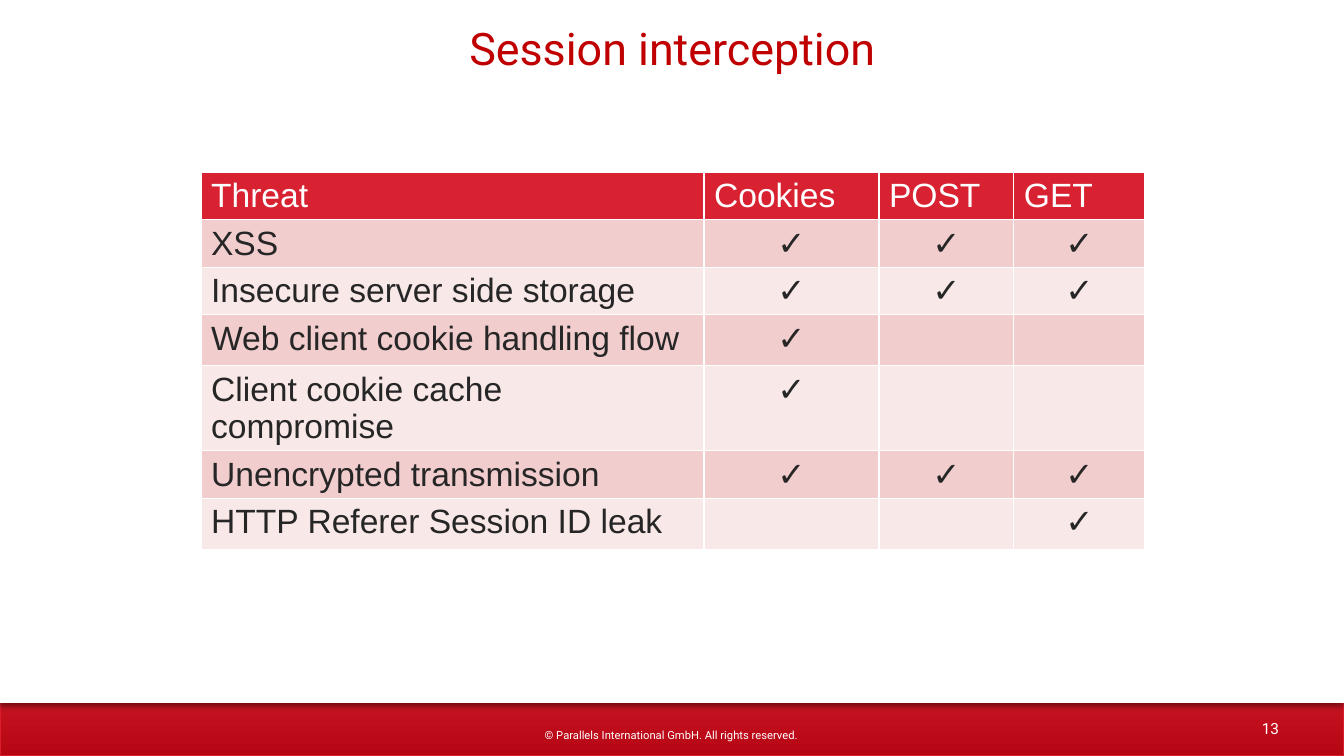
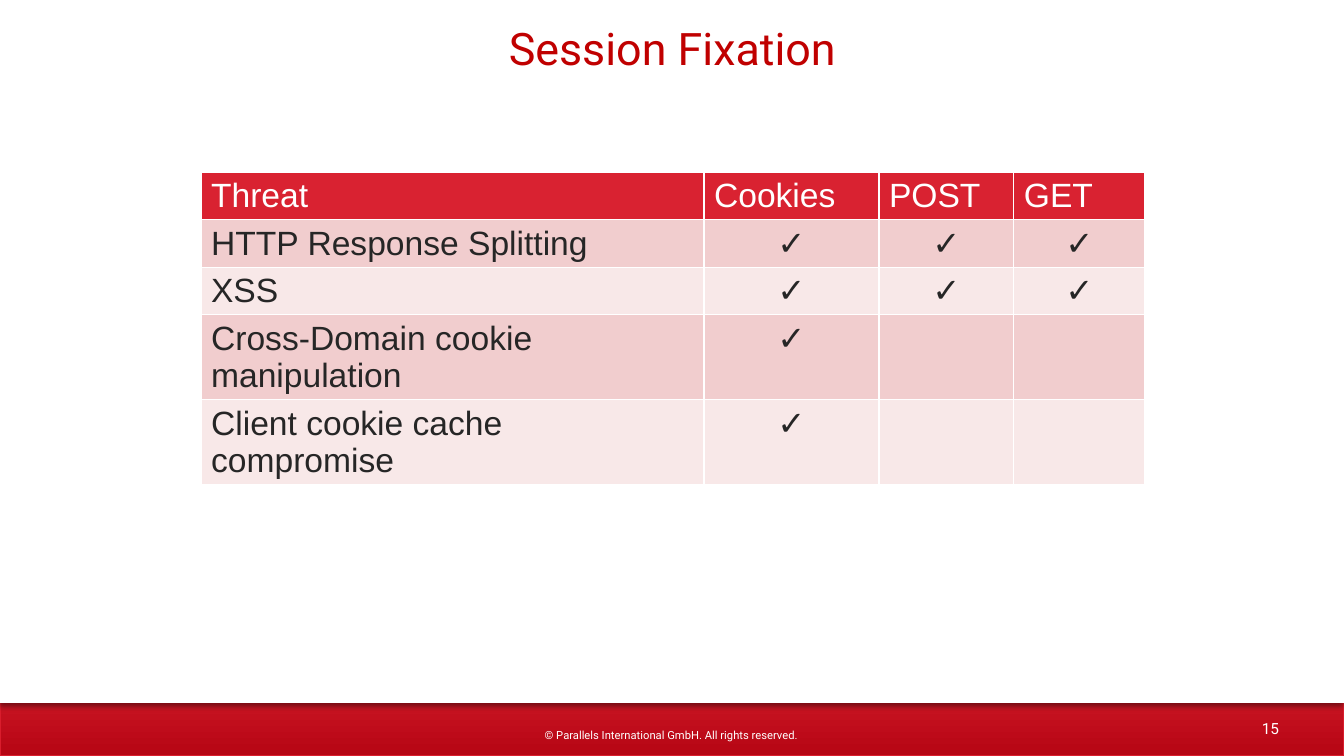
from dataclasses import dataclass

from lxml import etree
from pptx import Presentation
from pptx.dml.color import RGBColor
from pptx.enum.shapes import MSO_SHAPE
from pptx.enum.text import MSO_ANCHOR, MSO_AUTO_SIZE, PP_ALIGN
from pptx.oxml import parse_xml
from pptx.oxml.ns import nsdecls, qn
from pptx.util import Emu, Pt

CHECK = "✓"
COPYRIGHT = "© Parallels International GmbH. All rights reserved."
HEADERS = ("Threat", "Cookies", "POST", "GET")
SLIDES = [
    {
        "title": "Session interception",
        "number": "13",
        "threats": [
            ("XSS", CHECK, CHECK, CHECK),
            ("Insecure server side storage", CHECK, CHECK, CHECK),
            ("Web client cookie handling flow", CHECK, "", ""),
            ("Client cookie cache compromise", CHECK, "", ""),
            ("Unencrypted transmission", CHECK, CHECK, CHECK),
            ("HTTP Referer Session ID leak", "", "", CHECK),
        ],
    },
    {
        "title": "Session Fixation",
        "number": "15",
        "threats": [
            ("HTTP Response Splitting", CHECK, CHECK, CHECK),
            ("XSS", CHECK, CHECK, CHECK),
            ("Cross-Domain cookie manipulation", CHECK, "", ""),
            ("Client cookie cache compromise", CHECK, "", ""),
        ],
    },
]


@dataclass(frozen=True)
class Theme:
    white: str = "FFFFFF"
    title: str = "C00000"
    body: str = "262626"
    header: str = "D92231"
    bands: tuple = ("F1CDCE", "F8E8E8")
    footer_dark: str = "B60513"
    footer_light: str = "D92231"
    footer_line: str = "D91D2C"
    heading_font: str = "Roboto"
    table_font: str = "Arial"
    title_size: int = 32
    table_size: int = 24
    number_size: int = 11
    copyright_size: int = 8


THEME = Theme()
SLIDE_SIZE = (1344, 756)
FOOTER_BOX = (0, 630, 1344, 126)
PANEL_BOX = (0, 0, 1344, 703)
NUMBER_BOX = (1243, 713, 55, 31)
COPYRIGHT_BOX = (516, 728, 311, 13)
TITLE_BOX = (43, 15, 1259, 65)
TABLE_ORIGIN = (201, 172)
COLUMN_WIDTHS = (503, 175, 135, 131)
FULL_ROW_HEIGHT = 47
GAP_ROW_HEIGHT = 51  # rows that hold an empty cell


def px(length):
    return Emu(round(length * 914400 / 100.8))


def rgb(color):
    return RGBColor.from_string(color)


def write(paragraph, text, font_name, size, color, align=PP_ALIGN.CENTER):
    paragraph.alignment = align
    run = paragraph.add_run()
    run.text = text
    run.font.name = font_name
    run.font.size = Pt(size)
    run.font.bold = False
    run.font.color.rgb = rgb(color)


def add_shadow(shape, opacity, blur, distance):
    """Cast a black shadow straight down; blur and distance in points."""
    shape.shadow.inherit = False
    effects = shape.element.spPr.find(qn("a:effectLst"))
    effects.append(parse_xml(
        f'<a:outerShdw {nsdecls("a")} blurRad="{Pt(blur)}" dist="{Pt(distance)}" '
        f'dir="5400000" rotWithShape="0"><a:srgbClr val="000000">'
        f'<a:alpha val="{opacity * 1000}"/></a:srgbClr></a:outerShdw>'))


def add_rectangle(slide, box):
    return slide.shapes.add_shape(MSO_SHAPE.RECTANGLE, *map(px, box))


def add_label(slide, box, text, size, anchor, vertical_inset):
    frame = slide.shapes.add_textbox(*map(px, box)).text_frame
    frame.word_wrap = True
    frame.vertical_anchor = anchor
    frame.margin_top = frame.margin_bottom = px(vertical_inset)
    write(frame.paragraphs[0], text, THEME.heading_font, size, THEME.white)


def add_frame(slide, number):
    """Draw the footer band, the white panel above it and the footer texts."""
    footer = add_rectangle(slide, FOOTER_BOX)
    footer.fill.gradient()
    footer.fill.gradient_angle = 90
    stops = ((THEME.footer_dark, 0), (THEME.footer_light, 0.8))
    for stop, (color, position) in zip(footer.fill.gradient_stops, stops):
        stop.color.rgb = rgb(color)
        stop.position = position
    footer.line.color.rgb = rgb(THEME.footer_line)
    footer.line.width = Pt(0.75)
    add_shadow(footer, 35, 3.1, 1.8)

    panel = add_rectangle(slide, PANEL_BOX)
    panel.fill.solid()
    panel.fill.fore_color.rgb = rgb(THEME.white)
    panel.line.fill.background()
    add_shadow(panel, 40, 4, 3)

    add_label(slide, NUMBER_BOX, number, THEME.number_size, MSO_ANCHOR.MIDDLE, 5)
    add_label(slide, COPYRIGHT_BOX, COPYRIGHT, THEME.copyright_size, MSO_ANCHOR.TOP, 0)


def add_title(slide, text):
    title = slide.shapes.title
    title.left, title.top, title.width, title.height = map(px, TITLE_BOX)
    slide.shapes.element.append(title.element)  # bring in front of the panel
    frame = title.text_frame
    frame.auto_size = MSO_AUTO_SIZE.NONE
    frame.vertical_anchor = MSO_ANCHOR.MIDDLE
    write(frame.paragraphs[0], text, THEME.heading_font, THEME.title_size, THEME.title)


def add_borders(cell):
    properties = cell._tc.get_or_add_tcPr()
    for side in ("lnL", "lnR", "lnT", "lnB"):
        line = etree.SubElement(properties, qn(f"a:{side}"), w=str(Pt(1)))
        fill = etree.SubElement(line, qn("a:solidFill"))
        etree.SubElement(fill, qn("a:srgbClr"), val=THEME.white)


def add_threat_table(slide, threats):
    rows = [HEADERS, *threats]
    heights = [FULL_ROW_HEIGHT if all(row) else GAP_ROW_HEIGHT for row in rows]
    size = (sum(COLUMN_WIDTHS), sum(heights))
    table = slide.shapes.add_table(
        len(rows), len(HEADERS), *map(px, TABLE_ORIGIN + size)).table
    table.horz_banding = False
    for column, width in zip(table.columns, COLUMN_WIDTHS):
        column.width = px(width)
    for row_index, (values, height) in enumerate(zip(rows, heights)):
        table.rows[row_index].height = px(height)
        is_header = row_index == 0
        fill = THEME.header if is_header else THEME.bands[(row_index - 1) % 2]
        color = THEME.white if is_header else THEME.body
        for column_index, value in enumerate(values):
            cell = table.cell(row_index, column_index)
            add_borders(cell)
            cell.fill.solid()
            cell.fill.fore_color.rgb = rgb(fill)
            if value:
                align = PP_ALIGN.CENTER if value == CHECK else PP_ALIGN.LEFT
                write(cell.text_frame.paragraphs[0], value, THEME.table_font,
                      THEME.table_size, color, align)


def main():
    presentation = Presentation()
    presentation.slide_width, presentation.slide_height = map(px, SLIDE_SIZE)
    title_only = presentation.slide_layouts[5]
    for content in SLIDES:
        slide = presentation.slides.add_slide(title_only)
        add_frame(slide, content["number"])
        add_title(slide, content["title"])
        add_threat_table(slide, content["threats"])
    presentation.save("out.pptx")


if __name__ == "__main__":
    main()
